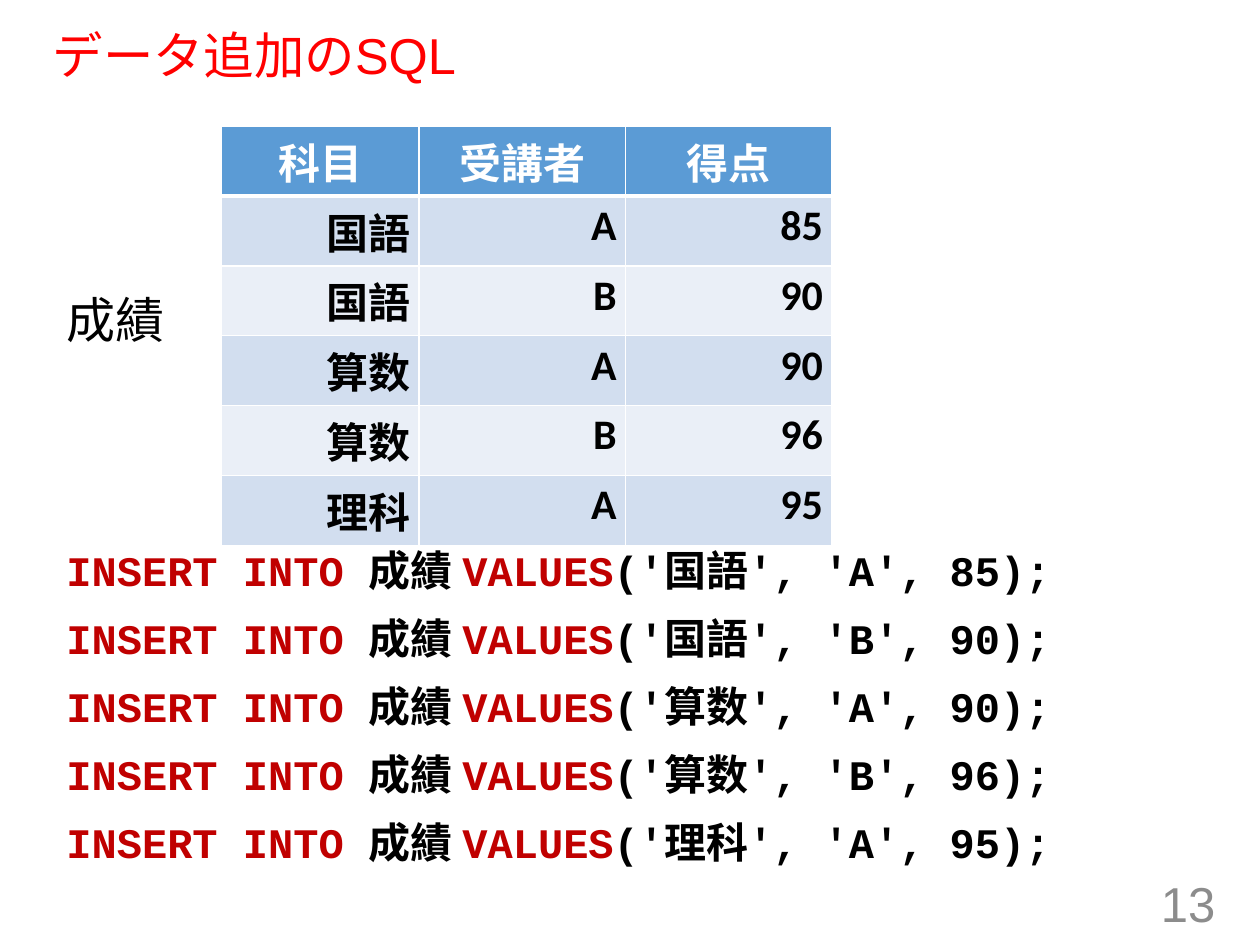
from lxml.etree import SubElement
from pptx import Presentation
from pptx.dml.color import RGBColor
from pptx.enum.text import MSO_ANCHOR as Anchor, MSO_AUTO_SIZE as AutoSize, PP_ALIGN as Align
from pptx.oxml.ns import qn
from pptx.util import Cm, Pt

# Content
TITLE = "データ追加のSQL"
TABLE_NAME = "成績"
PAGE_NUMBER = "13"
HEADERS = ("科目", "受講者", "得点")
SCORES = [
    ("国語", "A", 85),
    ("国語", "B", 90),
    ("算数", "A", 90),
    ("算数", "B", 96),
    ("理科", "A", 95),
]

COLORS = {
    "title": "FF0000",
    "text": "000000",
    "keyword": "C00000",
    "page": "8C8C8C",
    "white": "FFFFFF",
    "header": "5B9BD5",
    "odd": "D2DEEF",
    "even": "EAEFF7",
}

# Places in cm: left, top, width, height
TITLE_BOX = (0.81, 0.53, 23.5, 1.3)
PAGE_BOX = (19.05, 17.69, 5.7, 1.02)
LABEL_BOX = (1.09, 5.72, 3.94, 2.06)
CODE_BOX = (1.09, 10.85, 23.5, 6.86)
TABLE_LEFT, TABLE_TOP = 4.47, 2.54
COLUMN_WIDTHS = (3.98, 4.16, 4.16)
ROW_HEIGHT = 0.56  # rows grow to fit their text

# Formats
TITLE_FONT = {"name": "Arial", "size": Pt(28.8), "bold": False}
PLAIN_FONT = {"name": "Arial", "size": Pt(28), "bold": False}
CODE_FONT = {"name": "Courier New", "size": Pt(24), "bold": True}
CELL_FONT = {"name": "Calibri", "size": Pt(24), "bold": True}
TITLE_LINE = {"line_spacing": 0.9, "alignment": Align.LEFT}
BODY_LINE = {"space_before": Pt(10), "alignment": Align.LEFT}
CELL_MARGINS = {
    "margin_left": Cm(0.18),
    "margin_right": Cm(0.18),
    "margin_top": Cm(0.09),
    "margin_bottom": Cm(0.09),
}


def set_all(target, values):
    for name, value in values.items():
        setattr(target, name, value)


def place(shape, box):
    set_all(shape, dict(zip(("left", "top", "width", "height"), map(Cm, box))))


def write(paragraph, runs, font, layout):
    """Fill a paragraph with (text, color name) runs."""
    set_all(paragraph, layout)
    for text, color in runs:
        run = paragraph.add_run()
        run.text = text
        set_all(run.font, font)
        run.font.color.rgb = RGBColor.from_string(COLORS[color])


def fill_frame(shape, lines, font, layout, anchor=Anchor.TOP):
    frame = shape.text_frame
    set_all(frame, {"word_wrap": True, "auto_size": AutoSize.NONE,
                    "vertical_anchor": anchor})
    for index, runs in enumerate(lines):
        paragraph = frame.add_paragraph() if index else frame.paragraphs[0]
        write(paragraph, runs, font, layout)


def add_text(slide, box, *args):
    fill_frame(slide.shapes.add_textbox(*map(Cm, box)), *args)


def set_borders(cell, widths):
    """Draw white cell borders; widths are points by side."""
    properties = cell._tc.get_or_add_tcPr()
    for index, (side, width) in enumerate(widths.items()):
        line = SubElement(properties, qn(f"a:ln{side}"), w=str(Pt(width)))
        fill = SubElement(line, qn("a:solidFill"))
        SubElement(fill, qn("a:srgbClr"), val=COLORS["white"])
        properties.insert(index, line)


def add_score_table(slide):
    rows = [HEADERS, *SCORES]
    table = slide.shapes.add_table(
        len(rows), len(HEADERS), Cm(TABLE_LEFT), Cm(TABLE_TOP),
        Cm(sum(COLUMN_WIDTHS)), Cm(ROW_HEIGHT * len(rows))).table
    for column, width in zip(table.columns, COLUMN_WIDTHS):
        column.width = Cm(width)
    for row_index, row in enumerate(rows):
        is_header = row_index == 0
        band = "header" if is_header else ("even", "odd")[row_index % 2]
        color = "white" if is_header else "text"
        alignment = Align.CENTER if is_header else Align.RIGHT
        borders = {"L": 1, "R": 1, "T": 3 if row_index == 1 else 1,
                   "B": 3 if is_header else 1}
        for column_index, value in enumerate(row):
            cell = table.cell(row_index, column_index)
            set_all(cell, CELL_MARGINS)
            cell.fill.solid()
            cell.fill.fore_color.rgb = RGBColor.from_string(COLORS[band])
            set_borders(cell, borders)
            write(cell.text_frame.paragraphs[0], [(str(value), color)],
                  CELL_FONT, {"alignment": alignment})


def insert_statement(subject, student, score):
    return [
        ("INSERT INTO ", "keyword"),
        (f"{TABLE_NAME} ", "text"),
        ("VALUES", "keyword"),
        (f"('{subject}', '{student}', {score});", "text"),
    ]


def main():
    presentation = Presentation()
    set_all(presentation, {"slide_width": Cm(25.4), "slide_height": Cm(19.05)})
    slide = presentation.slides.add_slide(presentation.slide_layouts[5])

    # Title and page number
    title = slide.shapes.title
    place(title, TITLE_BOX)
    fill_frame(title, [[(TITLE, "title")]], TITLE_FONT, TITLE_LINE, Anchor.MIDDLE)
    add_text(slide, PAGE_BOX, [[(PAGE_NUMBER, "page")]], PLAIN_FONT,
             {"alignment": Align.RIGHT}, Anchor.MIDDLE)

    # Table name, SQL statements and the table
    add_text(slide, LABEL_BOX, [[(TABLE_NAME, "text")]], PLAIN_FONT, BODY_LINE)
    add_text(slide, CODE_BOX, [insert_statement(*row) for row in SCORES],
             CODE_FONT, BODY_LINE)
    add_score_table(slide)

    presentation.save("out.pptx")


if __name__ == "__main__":
    main()
